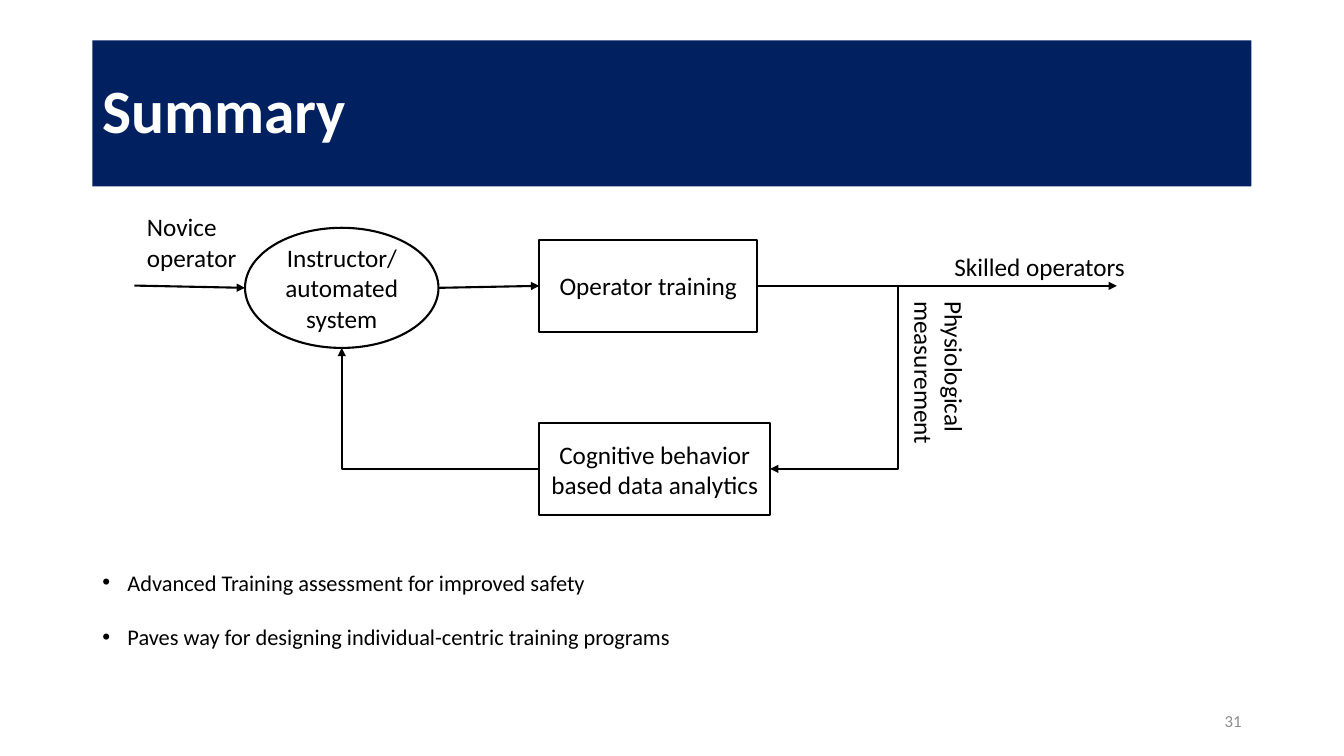
from pptx import Presentation
from pptx.dml.color import RGBColor
from pptx.enum.shapes import MSO_CONNECTOR, MSO_SHAPE
from pptx.enum.text import MSO_ANCHOR, PP_ALIGN
from pptx.oxml.ns import qn
from pptx.util import Pt
from lxml import etree

BLACK = RGBColor(0x00, 0x00, 0x00)
WHITE = RGBColor(0xFF, 0xFF, 0xFF)
NAVY = RGBColor(0x00, 0x20, 0x60)
GREY = RGBColor(0x8C, 0x8C, 0x8C)
RECTANGLE, OVAL = MSO_SHAPE.RECTANGLE, MSO_SHAPE.OVAL
STRAIGHT, ELBOW = MSO_CONNECTOR.STRAIGHT, MSO_CONNECTOR.ELBOW
TOP, MIDDLE = MSO_ANCHOR.TOP, MSO_ANCHOR.MIDDLE
LEFT, CENTER, RIGHT, JUSTIFY = PP_ALIGN.LEFT, PP_ALIGN.CENTER, PP_ALIGN.RIGHT, PP_ALIGN.JUSTIFY


def write(box, lines, size, color=BLACK, align=LEFT, anchor=TOP, bold=False):
    frame = box.text_frame
    frame.word_wrap = True
    frame.vertical_anchor = anchor
    for index, line in enumerate(lines):
        para = frame.add_paragraph() if index else frame.paragraphs[0]
        para.alignment = align
        span = para.add_run()
        span.text = line
        span.font.name = "Calibri"
        span.font.size = Pt(size)
        span.font.bold = bold
        span.font.color.rgb = color
    return frame.paragraphs


def add_arrow(kind, start_x, start_y, end_x, end_y):
    arrow = page.shapes.add_connector(kind, Pt(start_x), Pt(start_y), Pt(end_x), Pt(end_y))
    arrow.line.color.rgb = BLACK
    arrow.line.width = Pt(1.5)
    etree.SubElement(arrow.line._get_or_add_ln(), qn("a:tailEnd"), type="triangle")
    etree.SubElement(arrow._element.spPr, qn("a:effectLst"))
    return arrow


deck = Presentation()
deck.slide_width, deck.slide_height = Pt(960), Pt(540)
page = deck.slides.add_slide(deck.slide_layouts[6])

banner = page.shapes.add_shape(RECTANGLE, Pt(66), Pt(28.8), Pt(828), Pt(104.4))
banner.shadow.inherit = False
banner.fill.solid()
banner.fill.fore_color.rgb = NAVY
banner.line.fill.background()
write(banner, ["Summary"], 44, WHITE, anchor=MIDDLE, bold=True)[0].line_spacing = 0.9

page_number = page.shapes.add_textbox(Pt(678), Pt(500.5), Pt(216), Pt(28.8))
write(page_number, ["31"], 12, GREY, RIGHT, MIDDLE)

benefits = page.shapes.add_textbox(Pt(66), Pt(393.1), Pt(828), Pt(93.6))
for para in write(benefits, [
    "Advanced Training assessment for improved safety",
    "Paves way for designing individual-centric training programs",
], 16, align=JUSTIFY):
    para.line_spacing = 1.5
    para.space_before = Pt(10)
    properties = para._p.get_or_add_pPr()
    properties.set("marL", str(Pt(18)))
    properties.set("indent", str(-Pt(18)))
    etree.SubElement(properties, qn("a:buFont"), typeface="Arial")
    etree.SubElement(properties, qn("a:buChar"), char="•")

stages = {}
for name, kind, left, top, width, height in [
    ("Operator training", RECTANGLE, 385.2, 171.4, 155.6, 65.6),
    ("Cognitive behavior based data analytics", RECTANGLE, 385.2, 302.4, 165, 65.6),
    ("Instructor/automated system", OVAL, 175, 162.7, 138.2, 85.8),
]:
    stage = page.shapes.add_shape(kind, Pt(left), Pt(top), Pt(width), Pt(height))
    stage.shadow.inherit = False
    stage.fill.background()
    stage.line.color.rgb = BLACK
    stage.line.width = Pt(1.5)
    write(stage, [name], 18, align=CENTER, anchor=MIDDLE)
    stages[name] = stage
training = stages["Operator training"]

add_arrow(STRAIGHT, 96, 204, 175, 205.6)
add_arrow(STRAIGHT, 313.2, 205.6, 385.2, 204.2).end_connect(training, 1)
add_arrow(STRAIGHT, 540.8, 204.2, 797.8, 204.2).begin_connect(training, 3)

for left, top, width, height, turn in [
    (530.4, 223.6, 131, 91.6, 90),
    (244.1, 248.5, 141.1, 86.7, 180),
]:
    feedback = add_arrow(ELBOW, left, top, left + width, top + height)
    feedback._element.spPr.find(qn("a:prstGeom")).set("prst", "bentConnector2")
    feedback._element.spPr.find(qn("a:xfrm")).set("rot", str(turn * 60000))

for label, left, top, width, height, turn in [
    ("Physiological measurement", 558, 218.9, 149, 127.4, 90),
    ("Novice operator", 97.9, 147.6, 91.4, 117.4, 0),
    ("Skilled operators", 674.6, 175.7, 142.6, 82.1, 0),
]:
    caption = page.shapes.add_textbox(Pt(left), Pt(top), Pt(width), Pt(height))
    caption.rotation = turn
    write(caption, [label], 18)

deck.save("out.pptx")
